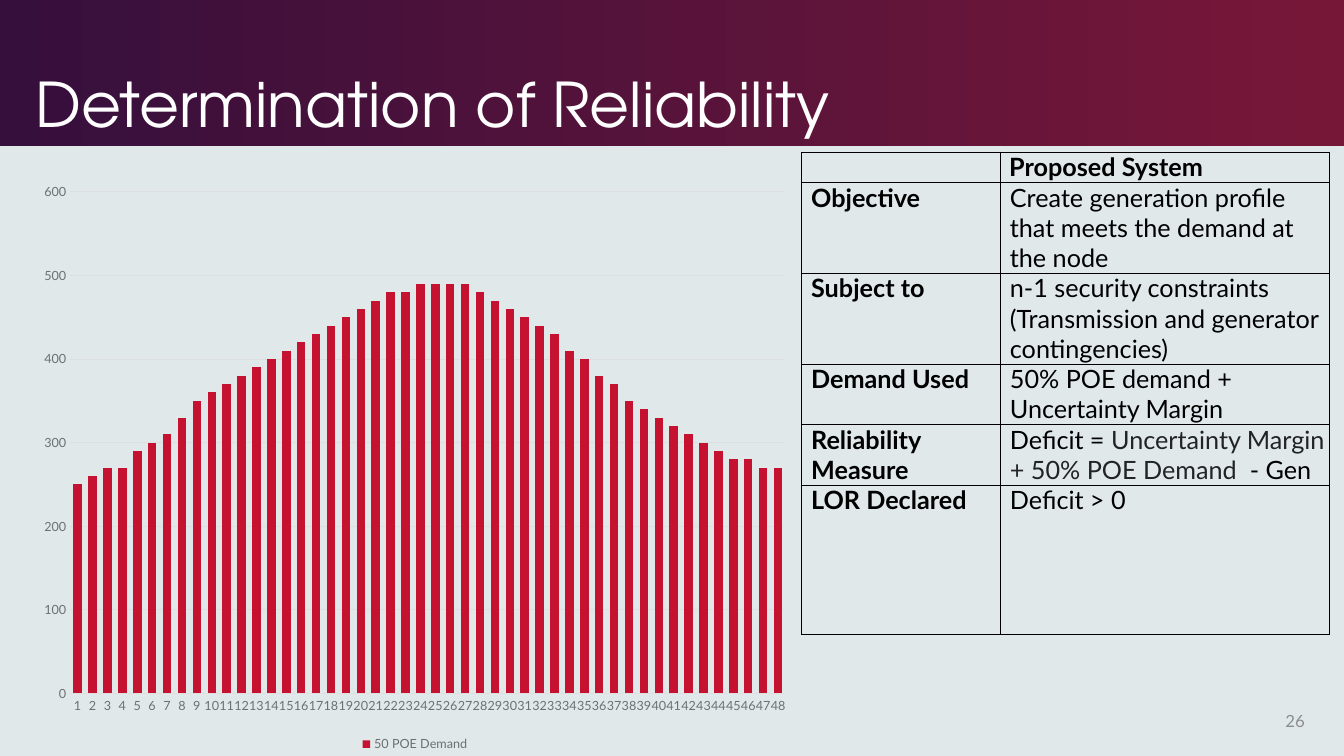
import pptx
import pptx.chart.data
import pptx.dml.color
import pptx.enum.chart
import pptx.enum.shapes
import pptx.enum.text
import pptx.oxml
import pptx.oxml.ns
import pptx.util

Pt = pptx.util.Pt
ANCHOR = pptx.enum.text.MSO_ANCHOR
ALIGN = pptx.enum.text.PP_ALIGN

# Content
TITLE = "Determination of Reliability"
PAGE_NUMBER = "26"
SERIES_NAME = "50 POE Demand"
DEMAND = [
    250, 260, 270, 270, 290, 300, 310, 330, 350, 360, 370, 380,
    390, 400, 410, 420, 430, 440, 450, 460, 470, 480, 480, 490,
    490, 490, 490, 480, 470, 460, 450, 440, 430, 410, 400, 380,
    370, 350, 340, 330, 320, 310, 300, 290, 280, 280, 270, 270,
]
BLACK, DARK, GREY, RULE = "000000", "222324", "6D7073", "DDDEDF"
# Each row: label, then the (text, colour) spans of its value
ROWS = [
    ("", [("Proposed System", BLACK)]),
    ("Objective", [("Create generation profile that meets the demand at the node", BLACK)]),
    ("Subject to", [("n-1 security constraints\v(Transmission and generator contingencies)", BLACK)]),
    ("Demand Used", [("50% POE demand + Uncertainty Margin", BLACK)]),
    ("Reliability Measure", [("Deficit = ", BLACK),
                             ("Uncertainty Margin + 50% POE Demand ", DARK),
                             (" - Gen", BLACK)]),
    ("LOR Declared", [("Deficit > 0", BLACK)]),
]
ROW_HEIGHTS = [20, 40, 40, 40, 40, 106.5]
COLUMN_WIDTHS = [142, 235.3]


def colour(value):
    return pptx.dml.color.RGBColor.from_string(value)


def format_font(font, value, **settings):
    font.color.rgb = colour(value)
    for name, setting in settings.items():
        setattr(font, name, setting)


def format_frame(frame, anchor, margin_x=7.2, margin_y=3.6):
    settings = {"word_wrap": True, "vertical_anchor": anchor,
                "margin_left": Pt(margin_x), "margin_right": Pt(margin_x),
                "margin_top": Pt(margin_y), "margin_bottom": Pt(margin_y)}
    for name, setting in settings.items():
        setattr(frame, name, setting)


def add_borders(cell, value, width):
    properties = cell._tc.get_or_add_tcPr()
    for place, side in enumerate(("lnL", "lnR", "lnT", "lnB")):
        properties.insert(place, pptx.oxml.parse_xml(
            f'<a:{side} {pptx.oxml.ns.nsdecls("a")} w="{Pt(width)}"><a:solidFill>'
            f'<a:srgbClr val="{value}"/></a:solidFill></a:{side}>'))


def fill_cell(cell, spans, bold, anchor, indent):
    cell.fill.background()
    for side in ("left", "right", "top", "bottom"):
        setattr(cell, f"margin_{side}", 0)
    cell.vertical_anchor = anchor
    para = cell.text_frame.paragraphs[0]
    para._p.get_or_add_pPr().set("marL", str(Pt(indent)))
    for text, value in spans:
        for place, part in enumerate(text.split("\v")):
            if place:
                para.add_line_break()
            span = para.add_run()
            span.text = part
            format_font(span.font, value, size=Pt(18), name="Lato", bold=bold)
    add_borders(cell, BLACK, 0.5)


def add_banner(page):
    banner = page.shapes.add_shape(
        pptx.enum.shapes.MSO_SHAPE.RECTANGLE, 0, 0, Pt(960), Pt(104.4))
    banner.shadow.inherit = False
    banner.line.fill.background()
    banner.fill.gradient()
    banner.fill.gradient_angle = 0
    for stop, (value, position) in zip(banner.fill.gradient_stops,
                                       [("360F3C", 0), ("771738", 0.99)]):
        stop.color.rgb = colour(value)
        stop.position = position
    page.shapes._spTree.insert(2, banner._element)


def add_title(page):
    title = page.shapes.title
    title.left, title.top, title.width, title.height = Pt(18.2), Pt(10.8), Pt(709), Pt(93.6)
    format_frame(title.text_frame, ANCHOR.BOTTOM)
    title.text_frame.text = TITLE
    para = title.text_frame.paragraphs[0]
    para.alignment, para.line_spacing = ALIGN.LEFT, 0.9
    format_font(para.runs[0].font, "FFFFFF", size=Pt(44), name="TeX Gyre Adventor")


def add_page_number(page):
    box = page.shapes.add_textbox(Pt(893.8), Pt(500.4), Pt(45.4), Pt(28.8))
    format_frame(box.text_frame, ANCHOR.MIDDLE)
    para = box.text_frame.paragraphs[0]
    para.text, para.alignment = PAGE_NUMBER, ALIGN.RIGHT
    format_font(para.runs[0].font, "8D8D8E", size=Pt(12), name="Lato")


def add_demand_chart(page):
    data = pptx.chart.data.CategoryChartData(number_format="0")
    data.categories = [str(period) for period in range(1, len(DEMAND) + 1)]
    data.add_series(SERIES_NAME, DEMAND)
    chart = page.shapes.add_chart(
        pptx.enum.chart.XL_CHART_TYPE.COLUMN_CLUSTERED,
        Pt(20.6), Pt(123.1), Pt(551.5), Pt(416.9), data).chart
    chart.has_title = False
    format_font(chart.font, DARK, size=Pt(10), name="Lato")
    chart.has_legend = True
    chart.legend.position = pptx.enum.chart.XL_LEGEND_POSITION.BOTTOM
    chart.legend.include_in_layout = False

    plot = chart.plots[0]
    plot.gap_width, plot.vary_by_categories = 75, False
    bars = plot.series[0].format.fill
    bars.solid()
    bars.fore_color.rgb = colour("C41230")

    periods, values = chart.category_axis, chart.value_axis
    for axis in (periods, values):
        axis.major_tick_mark = axis.minor_tick_mark = pptx.enum.chart.XL_TICK_MARK.NONE
    for part in (periods.tick_labels, values.tick_labels, chart.legend):
        format_font(part.font, GREY, size=Pt(9), name="Lato")
    values.minimum_scale, values.maximum_scale, values.major_unit = 0, 600, 100
    values.tick_labels.number_format = "0"
    values.tick_labels.number_format_is_linked = False
    values.format.line.fill.background()
    for line in (periods.format.line, values.major_gridlines.format.line):
        line.color.rgb, line.width = colour(RULE), Pt(0.75)

    # Show every period label, unrotated
    axis_xml = periods._element
    axis_xml.find(pptx.oxml.ns.qn("c:txPr")).find(
        pptx.oxml.ns.qn("a:bodyPr")).set("rot", "-60000000")
    axis_xml.find(pptx.oxml.ns.qn("c:noMultiLvlLbl")).addprevious(pptx.oxml.parse_xml(
        f'<c:tickLblSkip {pptx.oxml.ns.nsdecls("c")} val="1"/>'))


def add_system_table(page):
    table = page.shapes.add_table(
        len(ROWS), len(COLUMN_WIDTHS), Pt(572.4), Pt(108.6),
        Pt(sum(COLUMN_WIDTHS)), Pt(sum(ROW_HEIGHTS))).table
    table.first_row = table.horz_banding = False
    for column, width in zip(table.columns, COLUMN_WIDTHS):
        column.width = Pt(width)
    for index, (label, spans) in enumerate(ROWS):
        table.rows[index].height = Pt(ROW_HEIGHTS[index])
        header = index == 0
        anchor, indent = (ANCHOR.BOTTOM, 6.5) if header else (ANCHOR.TOP, 7)
        fill_cell(table.cell(index, 0), [(label, BLACK)] if label else [], True, anchor, indent)
        fill_cell(table.cell(index, 1), spans, header, anchor, indent)


def main():
    deck = pptx.Presentation()
    deck.slide_width, deck.slide_height = Pt(960), Pt(540)
    page = deck.slides.add_slide(deck.slide_layouts[5])
    page.background.fill.solid()
    page.background.fill.fore_color.rgb = colour("E0E8EA")
    add_banner(page)
    add_title(page)
    add_page_number(page)
    add_demand_chart(page)
    add_system_table(page)
    deck.save("out.pptx")


if __name__ == "__main__":
    main()
